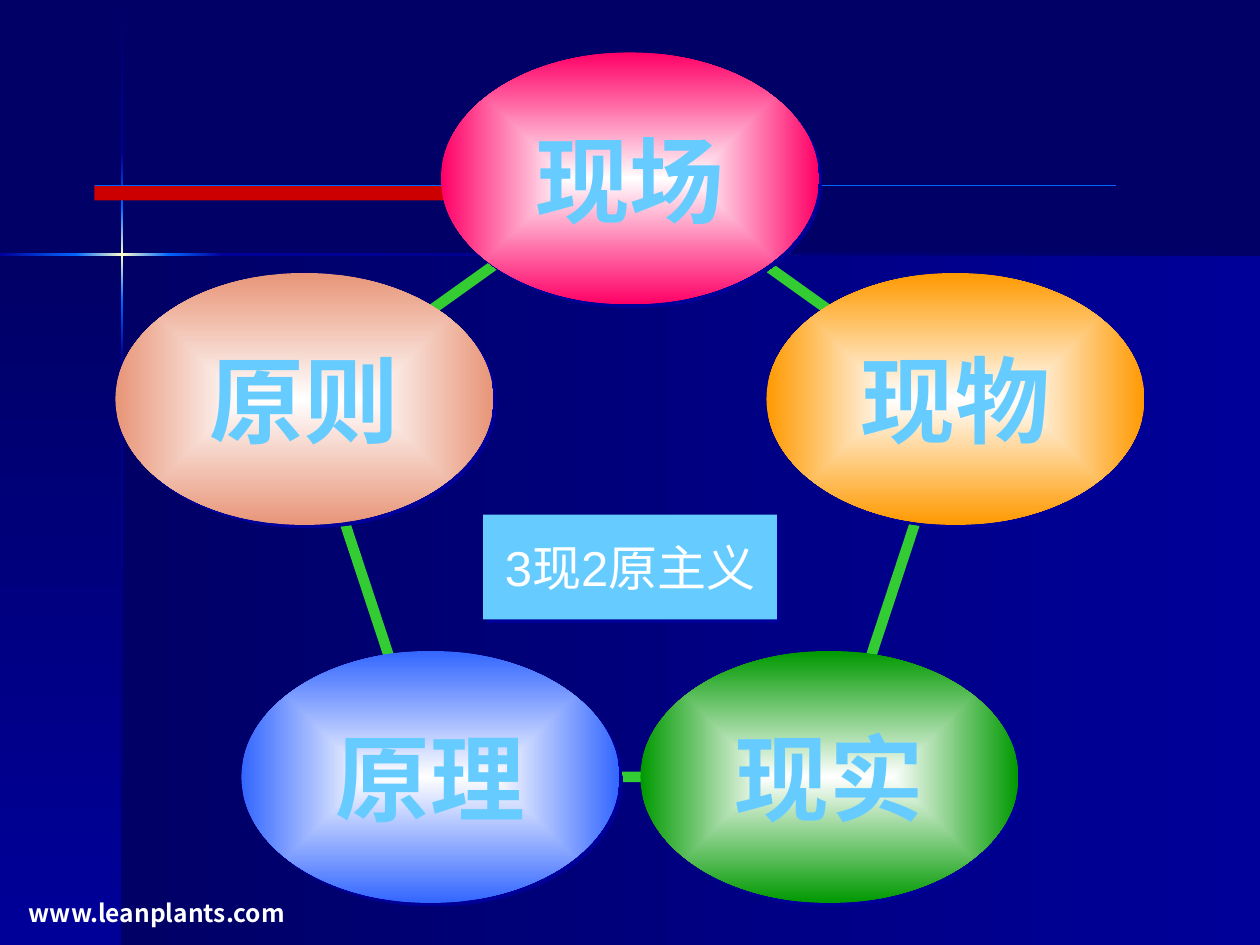
from lxml.etree import SubElement
from pptx import Presentation
from pptx.dml.color import RGBColor
from pptx.enum.shapes import MSO_CONNECTOR, MSO_SHAPE
from pptx.enum.text import MSO_ANCHOR, PP_ALIGN
from pptx.oxml import parse_xml
from pptx.oxml.ns import nsdecls, qn
from pptx.util import Inches, Pt

HUE = {
    "dark": "000066", "mid": "000099", "glow": "0066FF", "spark": "FFFFCC",
    "red": "CC0000", "link": "33CC33", "sky": "66CCFF", "white": "FFFFFF",
    "pink": "FF0066", "gold": "FF9900", "green": "009900",
    "blue": "3366FF", "peach": "E89578",
}
CELL = 1 / 12
NODES = [
    ("现场", 42, 5, "pink"),
    ("现物", 73, 26, "gold"),
    ("现实", 61, 62, "green"),
    ("原理", 23, 62, "blue"),
    ("原则", 11, 26, "peach"),
]
BANDS = [
    ("dark", "mid"), ("mid", "glow"), ("glow", "spark", "glow"),
    ("glow", "mid"), ("mid", "dark"),
]


def paint(name):
    return RGBColor.from_string(HUE[name])


def add_box(slide, kind, box):
    shape = slide.shapes.add_shape(kind, *(Inches(v) for v in box))
    shape.shadow.inherit = False
    shape.line.fill.background()
    return shape


def fill_flat(shape, name):
    shape.fill.solid()
    shape.fill.fore_color.rgb = paint(name)


def fill_grad(shape, names, shade):
    step = 100000 // (len(names) - 1)
    stops = "".join(
        f'<a:gs pos="{i * step}"><a:srgbClr val="{HUE[n]}"/></a:gs>'
        for i, n in enumerate(names))
    shape.fill.solid()
    old = shape.element.spPr.find(qn("a:solidFill"))
    old.getparent().replace(old, parse_xml(
        f'<a:gradFill {nsdecls("a")} rotWithShape="1">'
        f'<a:gsLst>{stops}</a:gsLst>{shade}</a:gradFill>'))


def fill_line(shape, names, angle):
    fill_grad(shape, names, f'<a:lin ang="{angle * 60000}" scaled="0"/>')


def fill_core(shape, name):
    fill_grad(shape, ("white", name),
              '<a:path path="shape"><a:fillToRect l="50000" t="50000" '
              'r="50000" b="50000"/></a:path>')


def cast(shape):
    shape.element.spPr.find(qn("a:effectLst")).append(parse_xml(
        f'<a:outerShdw {nsdecls("a")} dist="{Pt(2.8)}" dir="2700000" '
        f'algn="ctr" rotWithShape="0"><a:srgbClr val="{HUE["mid"]}"/>'
        '</a:outerShdw>'))


def write(shape, text, size, name, bold, font="Arial"):
    frame = shape.text_frame
    frame.text = text
    frame.word_wrap = False
    run = frame.paragraphs[0].runs[0]
    run.font.name = font
    run.font.size = Pt(size)
    run.font.bold = bold
    run.font.color.rgb = paint(name)
    SubElement(run.font._element, qn("a:ea"), typeface="Noto Sans CJK SC")


def label(shape, text, size, name, bold):
    write(shape, text, size, name, bold)
    shape.text_frame.vertical_anchor = MSO_ANCHOR.MIDDLE
    shape.text_frame.paragraphs[0].alignment = PP_ALIGN.CENTER


def draw_back(slide, wide, high, x, y):
    slide.background.fill.solid()
    slide.background.fill.fore_color.rgb = paint("dark")
    for box, angle in [((x, y, wide - x, high - y), 0),
                       ((0, y, x, high - y), 90)]:
        panel = add_box(slide, MSO_SHAPE.RECTANGLE, box)
        fill_line(panel, ("dark", "mid"), angle)


def draw_star(slide, wide, high, x, y, thin=0.02):
    arms = (-0.8, -0.37, 0.37, 0.8)
    down = [0] + [y + a for a in arms] + [high]
    over = [0] + [x + a for a in arms[1:]] + [wide]
    for start, end, names in zip(down, down[1:], BANDS):
        ray = add_box(slide, MSO_SHAPE.RECTANGLE,
                      (x - thin / 2, start, thin, end - start))
        fill_line(ray, names, 90)
    for start, end, names in zip(over, over[1:], BANDS[1:]):
        ray = add_box(slide, MSO_SHAPE.RECTANGLE,
                      (start, y - thin / 2, end - start, thin))
        fill_line(ray, names, 0)


def draw_bar(slide, x, y, wide, high):
    bar = add_box(slide, MSO_SHAPE.RECTANGLE, (x, y, wide * 0.58, high))
    fill_flat(bar, "red")
    rule = slide.shapes.add_connector(
        MSO_CONNECTOR.STRAIGHT,
        Inches(x), Inches(y), Inches(x + wide), Inches(y))
    rule.line.color.rgb = paint("glow")
    rule.line.width = Pt(0.75)
    SubElement(rule._element.spPr, qn("a:effectLst"))


def draw_foot(slide, box):
    foot = slide.shapes.add_textbox(*(Inches(v) for v in box))
    write(foot, "www.leanplants.com", 14, "white", True, "Noto Sans CJK SC")


def draw_ring(slide, col, row, cols, rows):
    ring = add_box(slide, MSO_SHAPE.REGULAR_PENTAGON,
                   [v * CELL for v in (col, row, cols, rows)])
    ring.fill.background()
    ring.line.color.rgb = paint("link")
    ring.line.width = Pt(6)
    for text, left, top, name in NODES:
        node = add_box(slide, MSO_SHAPE.OVAL,
                       [v * CELL for v in (left, top, 36, 24)])
        fill_core(node, name)
        cast(node)
        label(node, text, 54, "sky", True)


def draw_hub(slide, col, row, cols, rows):
    hub = add_box(slide, MSO_SHAPE.RECTANGLE,
                  [v * CELL for v in (col, row, cols, rows)])
    fill_flat(hub, "sky")
    cast(hub)
    label(hub, "3现2原主义", 28, "white", False)


def main():
    deck = Presentation()
    wide, high = 10, 7.5
    deck.slide_width, deck.slide_height = Inches(wide), Inches(high)
    slide = deck.slides.add_slide(deck.slide_layouts[6])
    draw_back(slide, wide, high, 0.97, 2.02)
    draw_star(slide, wide, high, 0.97, 2.02)
    draw_bar(slide, 0.75, 1.47, 8.11, 0.12)
    draw_foot(slide, (0.13, 7.08, 2.47, 0.46))
    draw_ring(slide, 29, 16, 62, 58)
    draw_hub(slide, 46, 49, 28, 10)
    deck.save("out.pptx")


if __name__ == "__main__":
    main()
